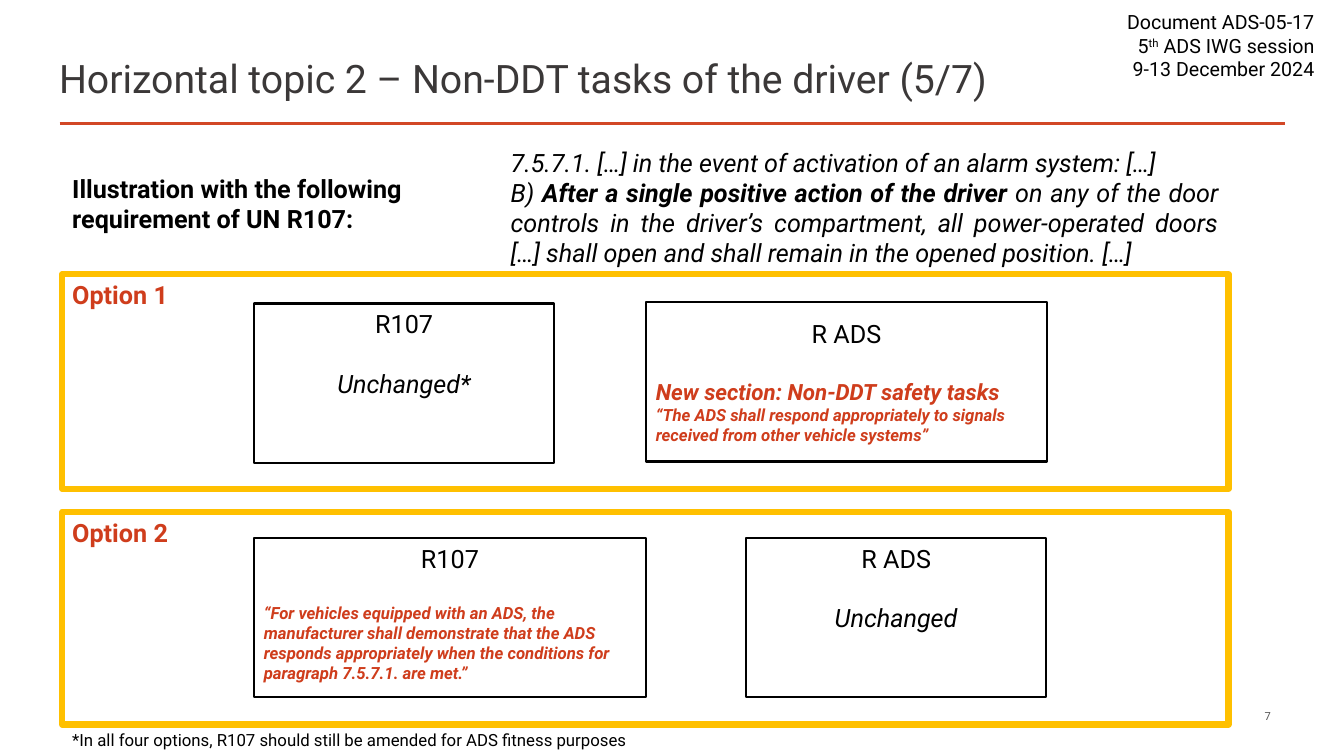
from lxml.etree import SubElement
from pptx import Presentation
from pptx.dml.color import RGBColor
from pptx.enum.shapes import MSO_CONNECTOR, MSO_SHAPE
from pptx.enum.text import MSO_ANCHOR as ANCHOR, PP_ALIGN as ALIGN
from pptx.oxml.ns import qn
from pptx.util import Cm, Pt

COLORS = {"black": "000000", "title": "3B3838", "grey": "595959",
          "rule": "D24726", "red": "CF3D1C", "gold": "FFC000"}
FONT = "Roboto"
HEADING_GAP = 21

LEFT, FRAME_W, BOX_LEFT, BOX_H = 1.57, 29.39, 6.4, 4.01
SMALL_W = 7.57

# Paragraph: (alignment, space before, runs); run: (text, size, colour, styles)
TEXTS = [
    ((28.02, 0.13, 5.36, 2.06), ANCHOR.TOP, False, [
        (ALIGN.RIGHT, 0, [("Document ADS-05-17", 14, "black", "")]),
        (ALIGN.RIGHT, 0, [("5", 14, "black", ""), ("th", 14, "black", "^"),
                          (" ADS IWG session", 14, "black", "")]),
        (ALIGN.RIGHT, 0, [("9-13 December 2024", 14, "black", "")])]),
    ((1.24, 1.19, 31.14, 1.55), ANCHOR.MIDDLE, True, [
        (ALIGN.LEFT, 0, [("Horizontal topic 2 – Non-DDT tasks of the driver (5/7)",
                          28, "title", "")])]),
    ((23.19, 17.86, 9.09, 0.38), ANCHOR.MIDDLE, True, [
        (ALIGN.RIGHT, 0, [("7", 8, "grey", "")])]),
    ((12.62, 3.58, 18.34, 3.33), ANCHOR.TOP, True, [
        (ALIGN.JUSTIFY, 0, [("7.5.7.1. […] in the event of activation of an alarm system: […]",
                             18, "black", "i")]),
        (ALIGN.JUSTIFY, 0, [
            ("B) ", 18, "black", "i"),
            ("After a single positive action of the driver ", 18, "black", "bi"),
            ("on any of the door controls in the driver’s compartment, all power-operated "
             "doors […] shall open and shall remain in the opened position. […]",
             18, "black", "i")])]),
    ((LEFT, 4.24, 10.06, 1.8), ANCHOR.TOP, True, [
        (ALIGN.LEFT, 0, [("Illustration with the following requirement of UN R107:",
                          18, "black", "b")])]),
    ((LEFT, 18.26, 15.37, 0.76), ANCHOR.TOP, True, [
        (ALIGN.LEFT, 0, [("*In all four options, R107 should still be amended for ADS "
                          "fitness purposes", 12, "black", "")])]),
]

# Option: (name, top, height, boxes); box: (left, top, width, anchor, heading, body)
OPTIONS = [
    ("Option 1", 6.91, 5.41, [
        (BOX_LEFT, 7.65, SMALL_W, ANCHOR.TOP, "R107", [
            (ALIGN.CENTER, HEADING_GAP, [("Unchanged*", 18, "black", "i")])]),
        (16.28, 7.62, 10.11, ANCHOR.MIDDLE, "R ADS", [
            (ALIGN.LEFT, HEADING_GAP, [("New section: Non-DDT safety tasks", 16, "red", "bi")]),
            (ALIGN.LEFT, 0, [("“The ADS shall respond appropriately to signals received "
                              "from other vehicle systems”", 12, "red", "bi")])])]),
    ("Option 2", 12.9, 5.36, [
        (BOX_LEFT, 13.56, 9.88, ANCHOR.TOP, "R107", [
            (ALIGN.LEFT, HEADING_GAP, [
                ("“For vehicles equipped with an ADS, the manufacturer shall demonstrate "
                 "that the ADS responds appropriately when the conditions for paragraph "
                 "7.5.7.1. are met.”", 12, "red", "bi")])]),
        (18.8, 13.56, SMALL_W, ANCHOR.TOP, "R ADS", [
            (ALIGN.CENTER, HEADING_GAP, [("Unchanged", 18, "black", "i")])])]),
]


def color(name):
    return RGBColor.from_string(COLORS[name])


def write(tf, paragraphs, anchor, wrap=True):
    tf.word_wrap = wrap
    tf.vertical_anchor = anchor
    for i, (align, gap, runs) in enumerate(paragraphs):
        p = tf.paragraphs[0] if i == 0 else tf.add_paragraph()
        p.alignment = align
        p.space_before = Pt(gap)
        for text, size, ink, styles in runs:
            r = p.add_run()
            r.text = text
            r.font.name = FONT
            r.font.size = Pt(size)
            r.font.color.rgb = color(ink)
            r.font.bold = "b" in styles
            r.font.italic = "i" in styles
            if "^" in styles:
                r._r.get_or_add_rPr().set("baseline", "30000")


def add_text(s, place, anchor, wrap, paragraphs):
    sp = s.shapes.add_textbox(*map(Cm, place))
    write(sp.text_frame, paragraphs, anchor, wrap)


def add_box(s, place, line, width, anchor, paragraphs):
    sp = s.shapes.add_shape(MSO_SHAPE.RECTANGLE, *map(Cm, place))
    sp.shadow.inherit = False
    sp.fill.background()
    sp.line.color.rgb = color(line)
    sp.line.width = Pt(width)
    write(sp.text_frame, paragraphs, anchor)


def add_rule(s):
    rule = s.shapes.add_connector(MSO_CONNECTOR.STRAIGHT, Cm(1.5), Cm(3.12), Cm(32.39), Cm(3.12))
    rule.line.color.rgb = color("rule")
    rule.line.width = Pt(2)
    SubElement(rule._element.spPr, qn("a:effectLst"))


def main():
    """Build the slide comparing two options for non-DDT tasks."""
    prs = Presentation()
    prs.slide_width, prs.slide_height = Cm(33.87), Cm(19.05)
    s = prs.slides.add_slide(prs.slide_layouts[6])
    add_rule(s)
    for text in TEXTS:
        add_text(s, *text)
    for name, top, height, boxes in OPTIONS:
        for left, box_top, width, anchor, heading, body in boxes:
            title = (ALIGN.CENTER, 0, [(heading, 18, "black", "")])
            add_box(s, (left, box_top, width, BOX_H), "black", 1.5, anchor, [title] + body)
        label = (ALIGN.LEFT, 0, [(name, 18, "red", "b")])
        add_box(s, (LEFT, top, FRAME_W, height), "gold", 4.5, ANCHOR.TOP, [label])
    prs.save("out.pptx")


if __name__ == "__main__":
    main()
